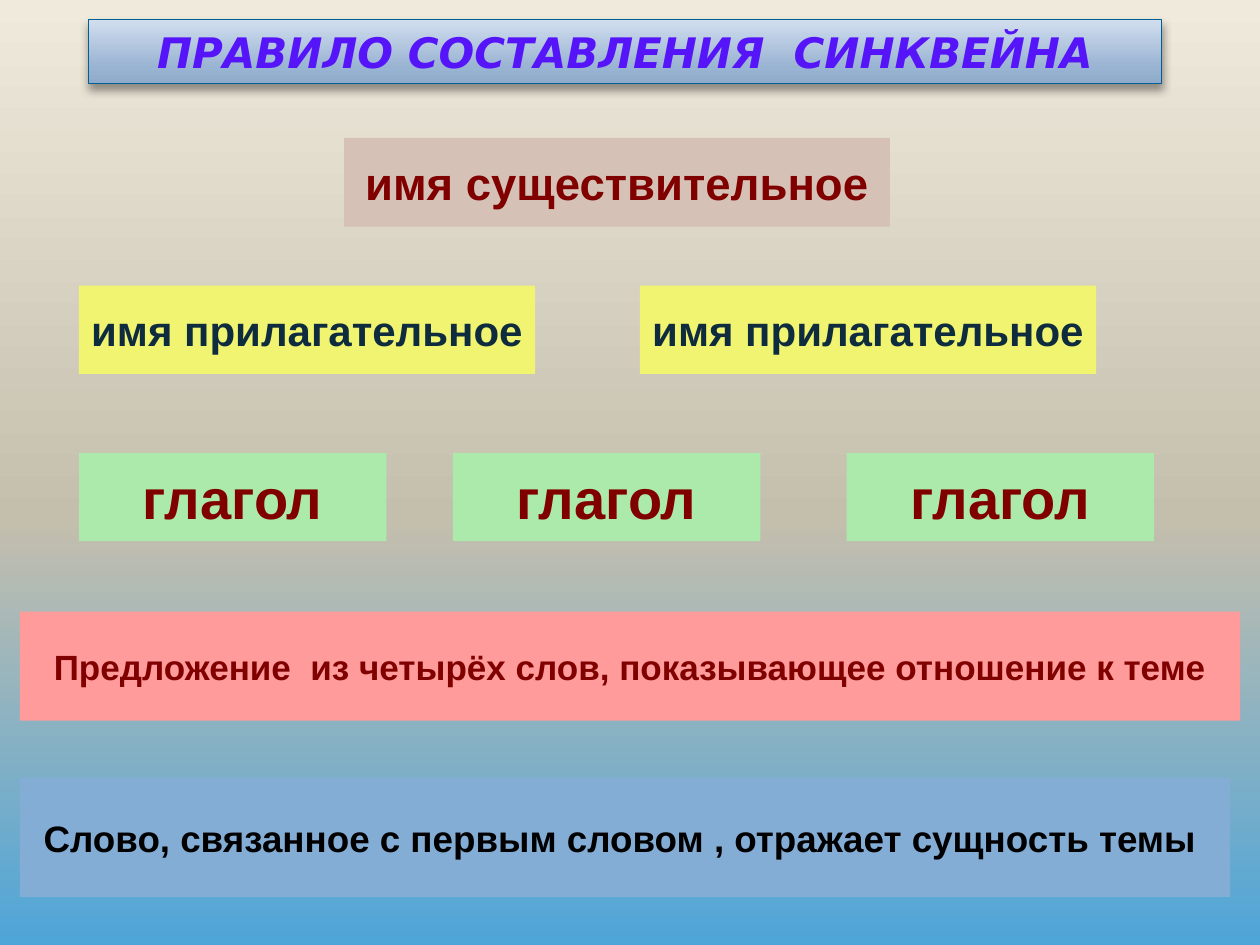
from copy import deepcopy

from lxml import etree
from pptx import Presentation
from pptx import util as u
from pptx.dml.color import RGBColor
from pptx.enum import shapes, text
from pptx.oxml import ns

MAROON = RGBColor(0x80, 0x00, 0x00)
NAVY = RGBColor(0x0E, 0x2C, 0x3E)
BLACK = RGBColor(0x00, 0x00, 0x00)
VIOLET = RGBColor(0x56, 0x15, 0xF9)
BORDER = RGBColor(0x03, 0x5E, 0x94)
BEIGE = RGBColor(0xD5, 0xC1, 0xB5)
YELLOW = RGBColor(0xF1, 0xF4, 0x70)
GREEN = RGBColor(0xAC, 0xEA, 0xAC)
PINK = RGBColor(0xFF, 0x9B, 0x9B)
BLUE = RGBColor(0x84, 0xAD, 0xD6)
SKY_STOPS = [(0, RGBColor(0x4E, 0xA5, 0xD8)),
             (0.45, RGBColor(0xC4, 0xBE, 0xAD)),
             (1, RGBColor(0xF0, 0xEA, 0xDC))]
TITLE_STOPS = [(0, RGBColor(0x90, 0xAB, 0xCB)),
               (0.25, RGBColor(0x99, 0xB3, 0xD2)),
               (1, RGBColor(0xD1, 0xDE, 0xEE))]


def write(tf, content, size, color, font="Arial", italic=False):
    p = tf.paragraphs[0]
    p.alignment = text.PP_ALIGN.CENTER
    r = p.add_run()
    r.text = content
    r.font.name = font
    r.font.size = u.Pt(size)
    r.font.bold = True
    r.font.italic = italic
    r.font.color.rgb = color


def fill_gradient(fill, element, stops):
    fill.gradient()
    fill.gradient_angle = 90
    stop_list = next(element.iter(ns.qn("a:gsLst")))
    stop_list.append(deepcopy(stop_list[-1]))
    for stop, (position, color) in zip(fill.gradient_stops, stops):
        stop.position = position
        stop.color.rgb = color


class Deck:
    def __init__(self, prs):
        self.s = prs.slides.add_slide(prs.slide_layouts[6])

    def background(self, stops):
        fill_gradient(self.s.background.fill, self.s.element, stops)

    def rect(self, x, y, w, h):
        sp = self.s.shapes.add_shape(shapes.MSO_SHAPE.RECTANGLE,
                                     u.Cm(x), u.Cm(y), u.Cm(w), u.Cm(h))
        sp.shadow.inherit = False
        return sp

    def card(self, content, x, y, w, h, fill, size, color):
        sp = self.rect(x, y, w, h)
        sp.fill.solid()
        sp.fill.fore_color.rgb = fill
        sp.line.fill.background()
        tf = sp.text_frame
        tf.word_wrap = False
        tf.vertical_anchor = text.MSO_ANCHOR.MIDDLE
        write(tf, content, size, color)

    def title(self, content, x, y, w, h):
        sp = self.rect(x, y, w, h)
        fill_gradient(sp.fill, sp.element, TITLE_STOPS)
        sp.line.color.rgb = BORDER
        sp.line.width = u.Pt(0.75)
        effects = next(sp.element.iter(ns.qn("a:effectLst")))
        shadow = etree.SubElement(effects, ns.qn("a:outerShdw"),
                                  blurRad=str(u.Pt(5.2)), dist=str(u.Pt(3)),
                                  dir="5400000", rotWithShape="0")
        color = etree.SubElement(shadow, ns.qn("a:srgbClr"), val=str(BLACK))
        etree.SubElement(color, ns.qn("a:alpha"), val="40000")
        tf = sp.text_frame
        tf.word_wrap = True
        tf.auto_size = text.MSO_AUTO_SIZE.SHAPE_TO_FIT_TEXT
        tf.vertical_anchor = text.MSO_ANCHOR.TOP
        write(tf, content, 24, VIOLET, font="DejaVu Sans", italic=True)


def main():
    prs = Presentation()
    prs.slide_width, prs.slide_height = u.Cm(25.4), u.Cm(19.05)
    deck = Deck(prs)
    deck.background(SKY_STOPS)
    deck.card("имя существительное", 6.94, 2.78, 11, 1.79, BEIGE, 26, MAROON)
    deck.title("ПРАВИЛО СОСТАВЛЕНИЯ  СИНКВЕЙНА", 1.78, 0.4, 21.64, 1.28)
    for x in (1.59, 12.9):
        deck.card("имя прилагательное", x, 5.76, 9.2, 1.78, YELLOW, 24, NAVY)
    for x in (1.59, 9.13, 17.07):
        deck.card("глагол", x, 9.13, 6.2, 1.78, GREEN, 32, MAROON)
    deck.card("Предложение  из четырёх слов, показывающее отношение к теме",
              0.4, 12.33, 24.6, 2.2, PINK, 20, MAROON)
    deck.card("Слово, связанное с первым словом , отражает сущность темы ",
              0.4, 15.68, 24.4, 2.4, BLUE, 21, BLACK)
    prs.save("out.pptx")


if __name__ == "__main__":
    main()
